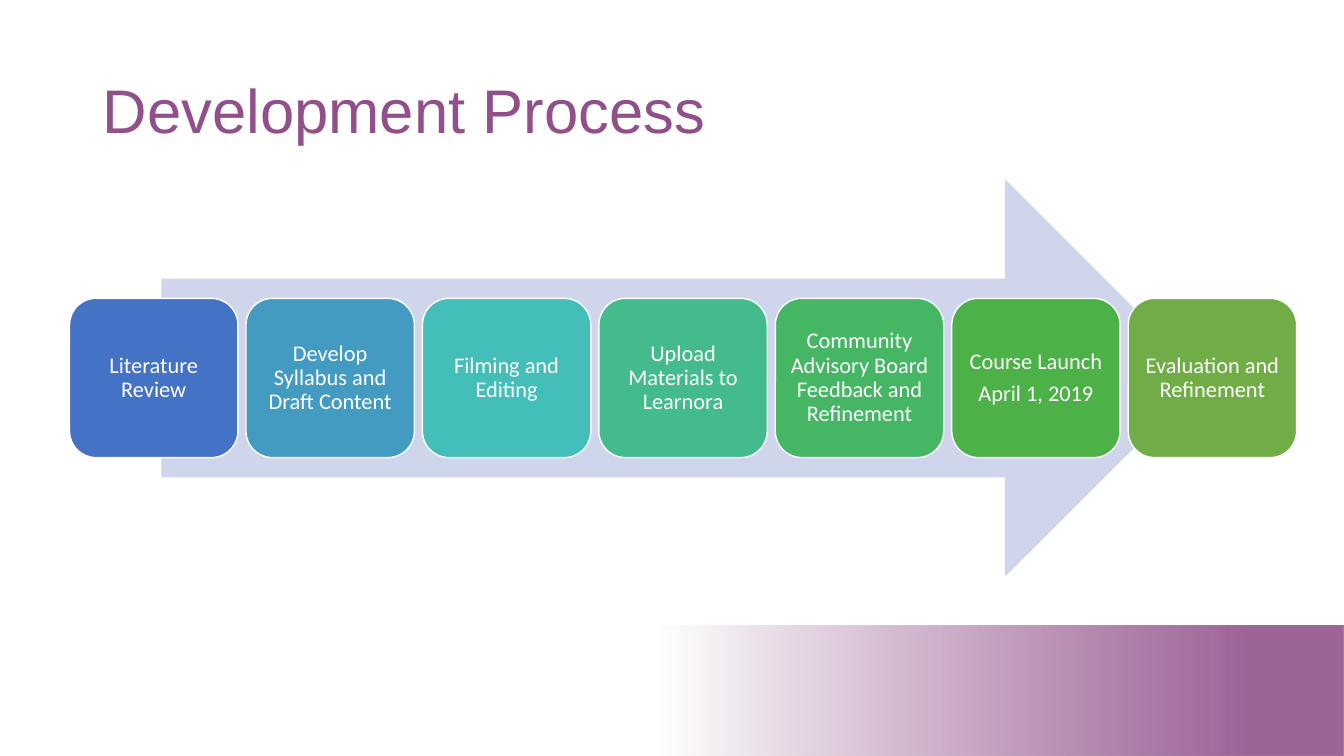
from dataclasses import dataclass

from pptx import Presentation
from pptx import util as u
from pptx.dml.color import RGBColor
from pptx.enum import shapes, text
from pptx.oxml import parse_xml
from pptx.oxml.ns import nsdecls

COLORS = {
    "white": "FFFFFF",
    "purple": "915089",
    "arrow": "CFD5EA",
    "blue": "4472C4",
    "sky": "449BC1",
    "teal": "43BEB9",
    "sea": "43BB8D",
    "emerald": "45B664",
    "green": "4CB146",
    "olive": "70AD47",
}
STEP_LEFT, STEP_TOP, STEP_PITCH = 0.69, 2.96, 1.75
STEP_WIDTH, STEP_HEIGHT, STEP_INSET = 1.67, 1.58, 0.07


@dataclass
class Step:
    label: str
    color: str


STEPS = [
    Step("Literature Review", "blue"),
    Step("Develop Syllabus and Draft Content", "sky"),
    Step("Filming and Editing", "teal"),
    Step("Upload Materials to Learnora", "sea"),
    Step("Community Advisory Board Feedback and Refinement", "emerald"),
    Step("Course Launch\nApril 1, 2019", "green"),
    Step("Evaluation and Refinement", "olive"),
]


def rgb(name: str) -> RGBColor:
    return RGBColor.from_string(COLORS[name])


def add_block(slide, kind, left: float, top: float, width: float, height: float, color: str):
    """Add a filled preset shape without outline or shadow."""
    sp = slide.shapes.add_shape(
        kind, u.Inches(left), u.Inches(top), u.Inches(width), u.Inches(height))
    sp.shadow.inherit = False
    sp.fill.solid()
    sp.fill.fore_color.rgb = rgb(color)
    sp.line.fill.background()
    return sp


def format_text(tf, font: str, size: float, color: str, align, space_after: float = 0) -> None:
    tf.word_wrap = True
    tf.vertical_anchor = text.MSO_ANCHOR.MIDDLE
    for p in tf.paragraphs:
        p.alignment = align
        p.line_spacing = 0.9
        p.space_after = u.Pt(space_after)
        for r in p.runs:
            r.font.name = font
            r.font.size = u.Pt(size)
            r.font.color.rgb = rgb(color)


def add_footer_band(slide) -> None:
    sp = add_block(slide, shapes.MSO_SHAPE.RECTANGLE, 0, 6.21, 13.33, 1.29, "white")
    sp.fill.gradient()
    sp.fill.gradient_angle = 0
    start, end = sp.fill.gradient_stops
    start.position, end.position = 0.49, 0.93
    start.color.rgb, end.color.rgb = rgb("white"), rgb("purple")
    # Slight transparency at the purple end
    srgb = sp._element.spPr.findall(".//{*}gs/{*}srgbClr")[-1]
    srgb.append(parse_xml(f'<a:alpha {nsdecls("a")} val="88000"/>'))


def add_title(slide, title: str) -> None:
    sp = slide.shapes.add_textbox(
        u.Inches(0.92), u.Inches(0.4), u.Inches(11.5), u.Inches(1.45))
    sp.text_frame.text = title
    format_text(sp.text_frame, "Arial", 44, "purple", text.PP_ALIGN.LEFT)


def add_step(slide, index: int, step: Step) -> None:
    sp = add_block(slide, shapes.MSO_SHAPE.ROUNDED_RECTANGLE,
                   STEP_LEFT + index * STEP_PITCH, STEP_TOP,
                   STEP_WIDTH, STEP_HEIGHT, step.color)
    sp.line.color.rgb = rgb("white")
    sp.line.width = u.Pt(1)
    tf = sp.text_frame
    tf.margin_left = tf.margin_right = u.Inches(STEP_INSET)
    tf.margin_top = tf.margin_bottom = u.Inches(STEP_INSET)
    tf.text = step.label
    format_text(tf, "Calibri", 16, "white", text.PP_ALIGN.CENTER, space_after=5.6)


def main() -> None:
    prs = Presentation()
    prs.slide_width, prs.slide_height = u.Inches(13.33), u.Inches(7.5)
    slide = prs.slides.add_slide(prs.slide_layouts[6])

    # Background band and title
    add_footer_band(slide)
    add_title(slide, "Development Process")

    # Process arrow with its steps
    add_block(slide, shapes.MSO_SHAPE.RIGHT_ARROW, 1.6, 1.78, 10.34, 3.94, "arrow")
    for index, step in enumerate(STEPS):
        add_step(slide, index, step)

    prs.save("out.pptx")


if __name__ == "__main__":
    main()
